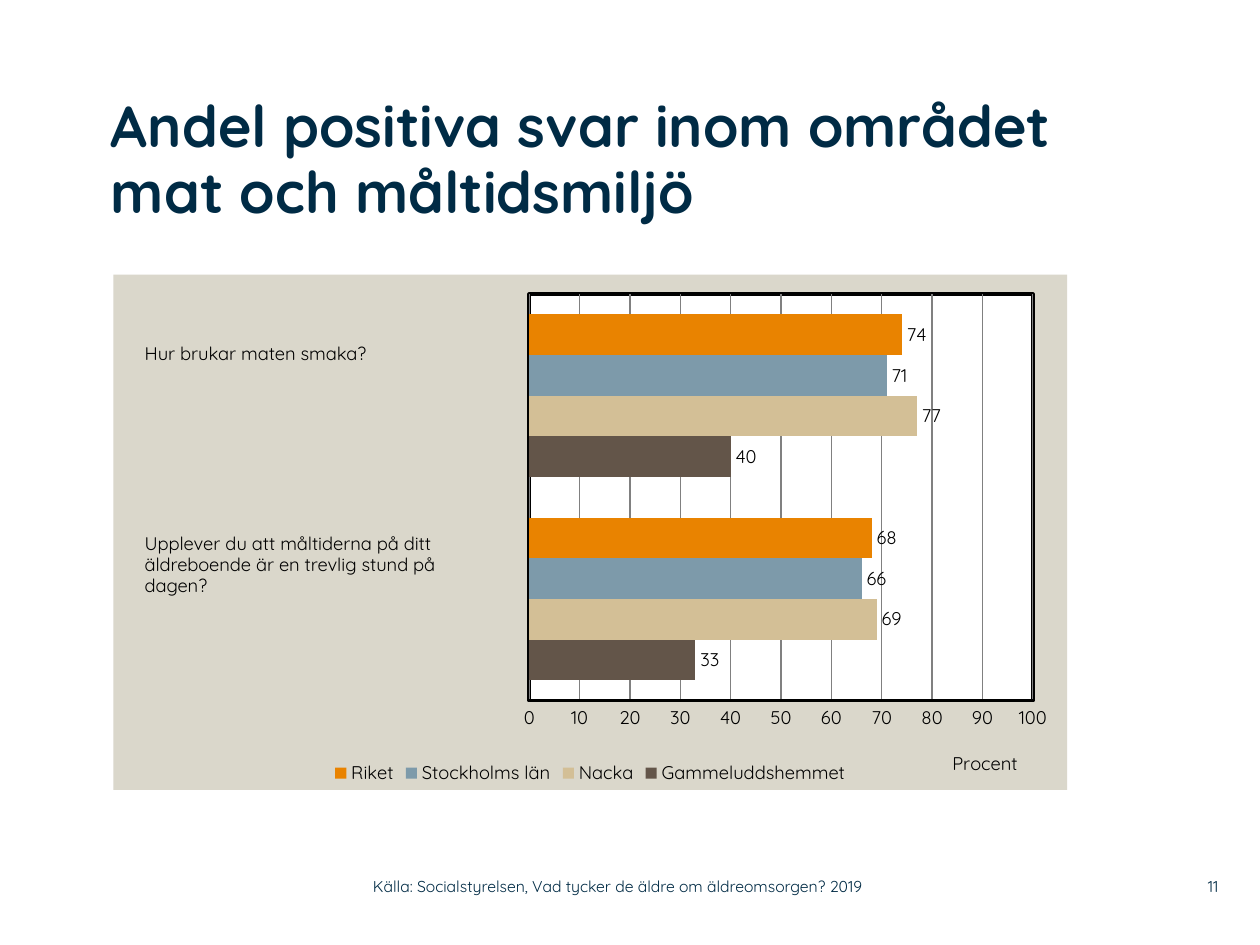
import pptx
import pptx.chart.data
import pptx.dml.color
import pptx.enum.chart
import pptx.enum.text
import pptx.oxml
import pptx.util
from pptx.oxml.ns import nsdecls, qn

Inches = pptx.util.Inches
Pt = pptx.util.Pt
RGBColor = pptx.dml.color.RGBColor
Anchor = pptx.enum.text.MSO_ANCHOR
Align = pptx.enum.text.PP_ALIGN

FONT = "Quicksand"
NAVY = RGBColor(0x00, 0x2B, 0x45)
BLACK = RGBColor(0x00, 0x00, 0x00)
WHITE = RGBColor(0xFF, 0xFF, 0xFF)
GRAY = RGBColor(0x80, 0x80, 0x80)
BEIGE = RGBColor(0xDA, 0xD7, 0xCB)
BROWN = RGBColor(0x63, 0x55, 0x49)
SAND = RGBColor(0xD3, 0xBF, 0x96)
BLUE = RGBColor(0x7D, 0x9A, 0xAA)
ORANGE = RGBColor(0xE9, 0x83, 0x00)

CATEGORIES = ["1", "2"]
SERIES = [
    ("Gammeluddshemmet", (33, 40), BROWN),
    ("Nacka", (69, 77), SAND),
    ("Stockholms län", (66, 71), BLUE),
    ("Riket", (68, 74), ORANGE),
]


def write_text(frame, text, size=10.5, color=BLACK, bold=False,
               align=Align.LEFT, line_spacing=None):
    """Write one paragraph per line of text."""
    for index, line in enumerate(text.split("\n")):
        paragraph = frame.paragraphs[0] if index == 0 else frame.add_paragraph()
        paragraph.alignment = align
        if line_spacing:
            paragraph.line_spacing = line_spacing
        run = paragraph.add_run()
        run.text = line
        set_font(run.font, size, color, bold)


def set_font(font, size=10.5, color=BLACK, bold=False):
    font.name = FONT
    font.size = Pt(size)
    font.bold = bold
    font.color.rgb = color


def make_layout(x, y, width=None, height=None):
    """Manual chart layout in fractions of the chart area."""
    parts = [("xMode", "edge"), ("yMode", "edge"), ("x", x), ("y", y)]
    target = ""
    if width:
        target = '<c:layoutTarget val="inner"/>'
        parts += [("w", width), ("h", height)]
    body = "".join(f'<c:{tag} val="{value}"/>' for tag, value in parts)
    return pptx.oxml.parse_xml(
        f'<c:layout {nsdecls("c")}><c:manualLayout>{target}{body}'
        "</c:manualLayout></c:layout>")


def replace_layout(parent, layout, position):
    for old in parent.findall(qn("c:layout")):
        parent.remove(old)
    parent.insert(position, layout)


def make_area_format(fill, line=None, width=0):
    outline = "<a:ln><a:noFill/></a:ln>"
    if line is not None:
        outline = (f'<a:ln w="{Pt(width)}"><a:solidFill><a:srgbClr val="{line}"/>'
                   "</a:solidFill></a:ln>")
    return pptx.oxml.parse_xml(
        f'<c:spPr {nsdecls("c", "a")}><a:solidFill><a:srgbClr val="{fill}"/>'
        f"</a:solidFill>{outline}</c:spPr>")


class SlideBuilder:
    def __init__(self, presentation):
        self.slide = presentation.slides.add_slide(presentation.slide_layouts[6])

    def add_text(self, text, left, top, width, height, inset=True,
                 anchor=Anchor.TOP, **style):
        shape = self.slide.shapes.add_textbox(
            Inches(left), Inches(top), Inches(width), Inches(height))
        frame = shape.text_frame
        frame.word_wrap = True
        frame.vertical_anchor = anchor
        if not inset:
            frame.margin_left = frame.margin_right = 0
            frame.margin_top = frame.margin_bottom = 0
        write_text(frame, text, **style)

    def add_bar_chart(self, left, top, width, height):
        data = pptx.chart.data.CategoryChartData(number_format="0")
        data.categories = CATEGORIES
        for name, values, _ in SERIES:
            data.add_series(name, values)
        chart = self.slide.shapes.add_chart(
            pptx.enum.chart.XL_CHART_TYPE.BAR_CLUSTERED,
            Inches(left), Inches(top), Inches(width), Inches(height), data).chart
        set_font(chart.font)
        chart.has_title = False
        self.style_bars(chart.plots[0])
        self.style_axes(chart)
        self.style_areas(chart)

    def style_bars(self, plot):
        plot.gap_width = 100
        plot.overlap = 0
        plot.vary_by_categories = False
        for series, (_, _, color) in zip(plot.series, SERIES):
            series.format.fill.solid()
            series.format.fill.fore_color.rgb = color
            labels = series.data_labels
            labels.show_value = True
            labels.position = pptx.enum.chart.XL_LABEL_POSITION.OUTSIDE_END
            set_font(labels.font)

    def style_axes(self, chart):
        chart.category_axis.visible = False
        axis = chart.value_axis
        axis.minimum_scale, axis.maximum_scale, axis.major_unit = 0, 100, 10
        axis.major_tick_mark = pptx.enum.chart.XL_TICK_MARK.NONE
        axis.format.line.color.rgb = BLACK
        axis.format.line.width = Pt(2)
        axis.major_gridlines.format.line.color.rgb = GRAY
        axis.major_gridlines.format.line.width = Pt(0.75)
        set_font(axis.tick_labels.font)
        write_text(axis.axis_title.text_frame, "Procent")
        replace_layout(axis.axis_title._element, make_layout(0.876, 0.916), 1)

    def style_areas(self, chart):
        chart.has_legend = True
        chart.legend.position = pptx.enum.chart.XL_LEGEND_POSITION.BOTTOM
        chart.legend.include_in_layout = False
        set_font(chart.legend.font)
        chart_space = chart._chartSpace
        plot_area = chart_space.chart.plotArea
        replace_layout(plot_area, make_layout(0.436, 0.038, 0.528, 0.789), 0)
        plot_area.append(make_area_format(WHITE, BLACK, 2))
        chart_space.chart.addnext(make_area_format(BEIGE))


def main():
    presentation = pptx.Presentation()
    presentation.slide_width = Inches(10)
    presentation.slide_height = Inches(7.5)
    builder = SlideBuilder(presentation)

    # Chart and title
    builder.add_bar_chart(0.9, 2.18, 7.57, 4.09)
    builder.add_text("Andel positiva svar inom området mat och måltidsmiljö",
                     0.88, 0.75, 8.42, 1.42, inset=False,
                     size=33, color=NAVY, bold=True, line_spacing=0.95)

    # Questions beside the bars
    builder.add_text("Hur brukar maten smaka?", 1.05, 2.67, 2.97, 0.28)
    builder.add_text("Upplever du att måltiderna på ditt äldreboende är en "
                     "trevlig stund på\ndagen?",
                     1.05, 4.19, 2.93, 0.63, line_spacing=0.95)

    # Footer
    footer = dict(inset=False, anchor=Anchor.MIDDLE, size=9, color=NAVY)
    builder.add_text("11", 9.2, 6.89, 0.47, 0.29, align=Align.RIGHT, **footer)
    builder.add_text("Källa: Socialstyrelsen, Vad tycker de äldre om "
                     "äldreomsorgen? 2019", 2.96, 6.89, 4.43, 0.29, **footer)

    presentation.save("out.pptx")


if __name__ == "__main__":
    main()
